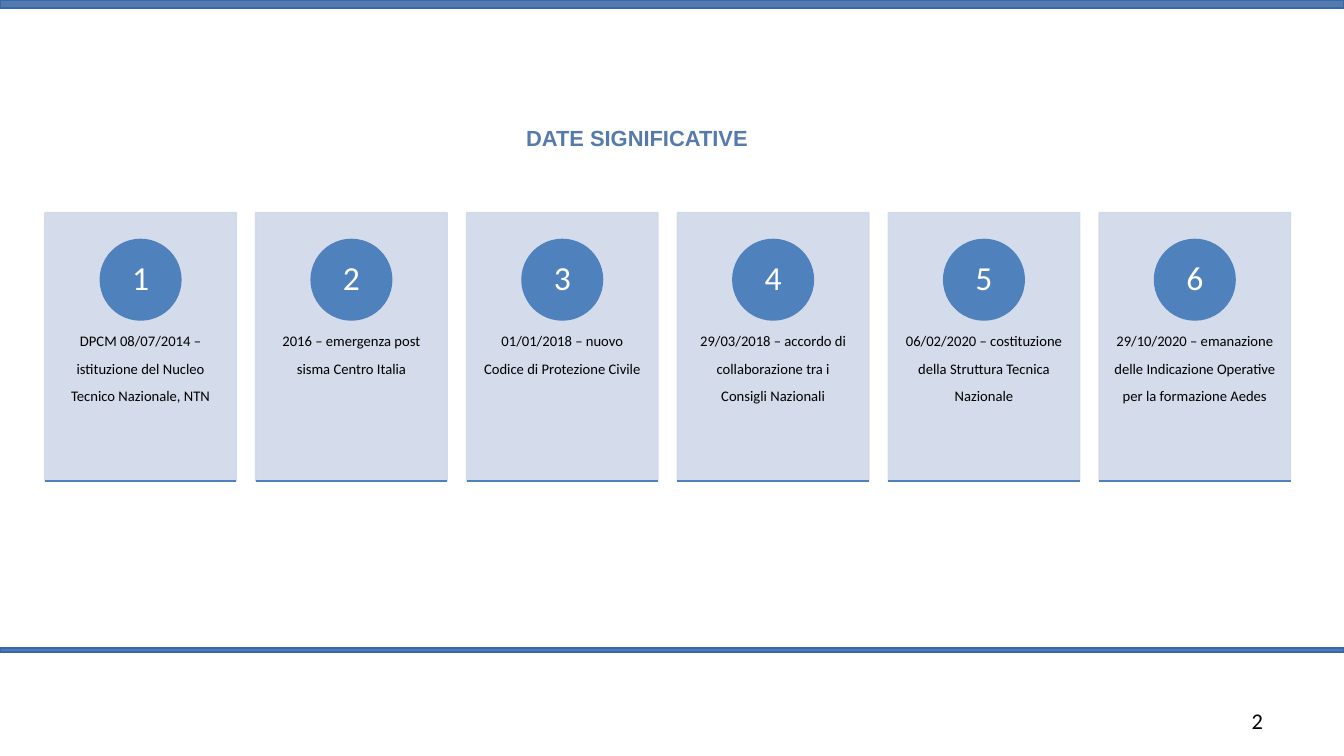
"""Build the slide of six significant dates."""
import pptx
import pptx.util
import pptx.dml.color
import pptx.enum.shapes
import pptx.enum.text
import lxml.etree
import pptx.oxml.ns

Inches = pptx.util.Inches
Pt = pptx.util.Pt
Shape = pptx.enum.shapes.MSO_SHAPE
Align = pptx.enum.text.PP_ALIGN
Anchor = pptx.enum.text.MSO_ANCHOR
qn = pptx.oxml.ns.qn

COLORS = {
    "bar": "557AAC", "edge": "3668AF", "card": "D0D8E8",
    "blue": "4F81BD", "white": "FFFFFF", "black": "000000",
}
DATES = [
    "DPCM 08/07/2014 – istituzione del Nucleo Tecnico Nazionale, NTN",
    "2016 – emergenza post sisma Centro Italia",
    "01/01/2018 – nuovo Codice di Protezione Civile",
    "29/03/2018 – accordo di collaborazione tra i Consigli Nazionali",
    "06/02/2020 – costituzione della Struttura Tecnica Nazionale",
    "29/10/2020 – emanazione delle Indicazione Operative per la formazione Aedes",
]


def draw(kind, left, top, width, height, fill, line):
    shape = slide.shapes.add_shape(
        kind, Inches(left), Inches(top), Inches(width), Inches(height))
    shape.shadow.inherit = False
    shape.fill.solid()
    shape.fill.fore_color.rgb = pptx.dml.color.RGBColor.from_string(COLORS[fill])
    shape.line.color.rgb = pptx.dml.color.RGBColor.from_string(COLORS[line])
    shape.line.width = Pt(2)
    return shape


def write(shape, text, size, color, align, pad, anchor=Anchor.TOP,
          face="Calibri", space=0.9, bold=False, raised=False):
    frame = shape.text_frame
    frame.text = text
    frame.word_wrap = True
    frame.vertical_anchor = anchor
    frame.margin_left = frame.margin_right = Inches(pad[0])
    frame.margin_top = frame.margin_bottom = Inches(pad[1])
    para = frame.paragraphs[0]
    para.alignment = align
    para.line_spacing = space
    run = para.runs[0]
    run.font.name = face
    run.font.size = Pt(size)
    run.font.bold = bold
    run.font.color.rgb = pptx.dml.color.RGBColor.from_string(COLORS[color])
    if raised:
        run._r.get_or_add_rPr().set("baseline", "30000")


deck = pptx.Presentation()
deck.slide_width = Inches(26.67)
deck.slide_height = Inches(15)
slide = deck.slides.add_slide(deck.slide_layouts[6])

for top, height in [(12.86, 0.08), (0, 0.16)]:
    draw(Shape.RECTANGLE, 0, top, 26.67, height, "bar", "edge")

title = slide.shapes.add_textbox(Inches(10.34), Inches(1.88), Inches(5.98), Inches(0.9))
write(title, "DATE SIGNIFICATIVE", 54, "bar", Align.LEFT, (0.1, 0.05),
      face="Arial", space=1.5, bold=True, raised=True)

number = slide.shapes.add_textbox(Inches(19.11), Inches(13.9), Inches(6.22), Inches(0.8))
write(number, "2", 32, "black", Align.RIGHT, (0.27, 0.13), Anchor.MIDDLE, space=1.0)

wide = 3.8
disc = 1.6
step = (21.81 - 0.89) / (len(DATES) - 1)
for i, text in enumerate(DATES):
    left = 0.89 + i * step
    card = draw(Shape.RECTANGLE, left, 4.22, wide, 5.32, "card", "card")
    for tint in card._element.spPr.iter(qn("a:srgbClr")):
        lxml.etree.SubElement(tint, qn("a:alpha")).set("val", "90000")

    label = slide.shapes.add_textbox(Inches(left), Inches(6.24), Inches(wide), Inches(3.19))
    write(label, text, 36, "black", Align.CENTER, (0.3, 0.36), raised=True)

    badge = draw(Shape.OVAL, left + (wide - disc) / 2, 4.75, disc, disc, "blue", "blue")
    write(badge, str(i + 1), 48, "white", Align.CENTER, (0.12, 0.01), Anchor.MIDDLE)

    rule = slide.shapes.add_connector(
        pptx.enum.shapes.MSO_CONNECTOR.STRAIGHT,
        Inches(left), Inches(9.54), Inches(left + wide), Inches(9.54))
    rule.line.color.rgb = pptx.dml.color.RGBColor.from_string(COLORS["blue"])
    rule.line.width = Pt(2)
    lxml.etree.SubElement(rule._element.spPr, qn("a:effectLst"))

deck.save("out.pptx")
